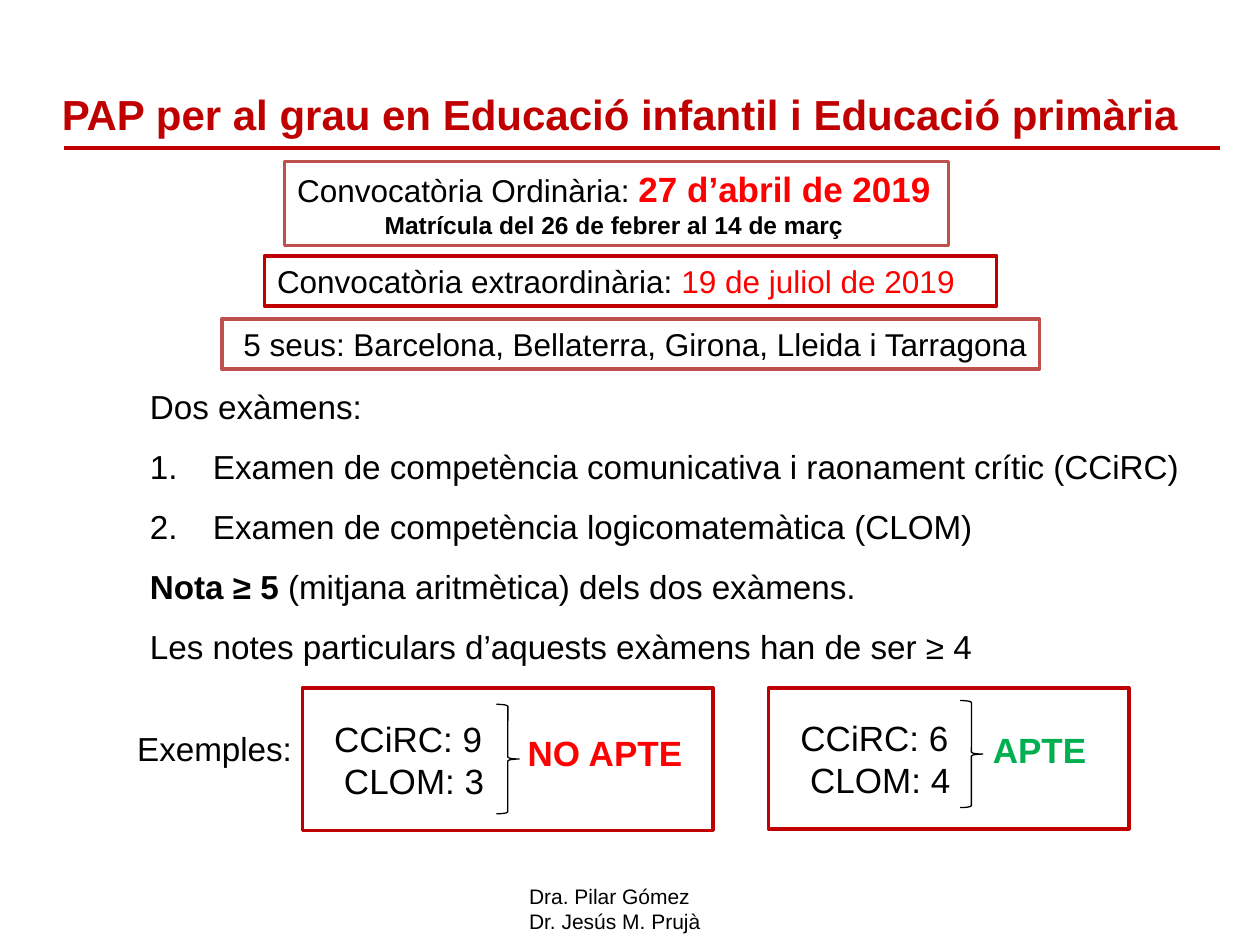
from lxml.etree import SubElement
from pptx import Presentation
from pptx.dml.color import RGBColor
from pptx.enum.shapes import MSO_CONNECTOR, MSO_SHAPE
from pptx.enum.text import MSO_ANCHOR, MSO_AUTO_SIZE, PP_ALIGN
from pptx.oxml.ns import qn
from pptx.util import Pt

THEME = {
    "font": "Arial",
    "black": "000000", "white": "FFFFFF", "dark_red": "C00000",
    "brick": "C0504D", "red": "FF0000", "green": "00B050",
    "title": 24, "body": 19, "box": 18, "date": 20, "enrol": 14,
    "example": 20, "footer": 12, "box_line": 2, "rule_line": 2.25, "brace_line": 0.75,
}
LEFT, CENTER, RIGHT = PP_ALIGN.LEFT, PP_ALIGN.CENTER, PP_ALIGN.RIGHT

# Content: a run is (text, size, colour, bold)
TITLE = "PAP per al grau en Educació infantil i Educació primària"
FOOTER = ["Dra. Pilar Gómez", "Dr. Jesús M. Prujà"]
EXAMS = [  # (numbered, [(text, bold)])
    (False, [("Dos exàmens:", False)]),
    (True, [("Examen de competència comunicativa i raonament crític (CCiRC)", False)]),
    (True, [("Examen de competència logicomatemàtica (CLOM)", False)]),
    (False, [("Nota ≥ 5 ", True), ("(mitjana aritmètica) dels dos exàmens.", False)]),
    (False, [("Les notes particulars d’aquests exàmens han de ser ≥ 4", False)]),
]
CALLS = [  # (position, border, wrap, [(alignment, runs)])
    ((162.7, 92.2, 379.4, 48.2), "brick", False, [
        (LEFT, [("Convocatòria Ordinària: ", "box", "black", False),
                ("27 d’abril de 2019", "date", "red", True)]),
        (CENTER, [("Matrícula del 26 de febrer al 14 de març", "enrol", "black", True)])]),
    ((151.2, 146.2, 418.3, 28.8), "dark_red", False, [
        (LEFT, [("Convocatòria extraordinària: ", "box", "black", False),
                ("19 de juliol de 2019", "box", "red", False)])]),
    ((126.7, 182.2, 467.3, 28.8), "brick", True, [
        (RIGHT, [("5 seus: Barcelona, Bellaterra, Girona, Lleida i Tarragona",
                  "box", "black", False)])]),
]
EXAMPLES = [  # (box, brace, verdict position, marks, verdict, colour)
    ((172.8, 393.1, 234.7, 81.4), (283.7, 402.5, 13, 62.6), (294.5, 414.7, 103.7, 31.7),
     ["CCiRC: 9", "CLOM: 3"], "NO APTE", "red"),
    ((439.2, 393.1, 205.9, 80.6), (548.6, 400.3, 13, 61.2), (560.2, 412.6, 68.4, 31.7),
     ["CCiRC: 6", "CLOM: 4"], "APTE", "green"),
]
MARK_INDENTS = [11.1, 16.7]


def rgb(name):
    return RGBColor.from_string(THEME[name])


def place(shape, position):
    shape.left, shape.top, shape.width, shape.height = map(Pt, position)


def add_run(paragraph, text, size, colour="black", bold=False):
    run = paragraph.add_run()
    run.text = text
    run.font.name = THEME["font"]
    run.font.size = Pt(THEME[size])
    run.font.bold = bold
    run.font.color.rgb = rgb(colour)


def paragraphs(frame, items):
    """Pair each item with its paragraph, adding paragraphs as needed."""
    for index, item in enumerate(items):
        yield (frame.add_paragraph() if index else frame.paragraphs[0]), item


def set_indent(paragraph, left, first=0):
    properties = paragraph._p.get_or_add_pPr()
    properties.set("marL", str(Pt(left)))
    properties.set("indent", str(Pt(first)))
    return properties


def add_outline(slide, kind, position, border, width, fill=None):
    shape = slide.shapes.add_shape(kind, *map(Pt, position))
    shape.shadow.inherit = False
    shape.line.color.rgb = rgb(border)
    shape.line.width = Pt(THEME[width])
    if fill:
        shape.fill.solid()
        shape.fill.fore_color.rgb = rgb(fill)
    else:
        shape.fill.background()
    return shape


def add_label(slide, position, lines, size, colour="black", bold=False):
    frame = slide.shapes.add_textbox(*map(Pt, position)).text_frame
    frame.word_wrap = False
    frame.auto_size = MSO_AUTO_SIZE.SHAPE_TO_FIT_TEXT
    for paragraph, line in paragraphs(frame, lines):
        add_run(paragraph, line, size, colour, bold)


def add_header(slide):
    rule = slide.shapes.add_connector(
        MSO_CONNECTOR.STRAIGHT, Pt(36.7), Pt(84.5), Pt(697), Pt(84.5))
    rule.line.color.rgb = rgb("dark_red")
    rule.line.width = Pt(THEME["rule_line"])
    SubElement(rule._element.spPr, qn("a:effectLst"))

    title = slide.shapes.title
    place(title, (28.1, 45.4, 691.9, 39.6))
    frame = title.text_frame
    frame.auto_size = MSO_AUTO_SIZE.NONE
    frame.vertical_anchor = MSO_ANCHOR.MIDDLE
    frame.paragraphs[0].alignment = LEFT
    add_run(frame.paragraphs[0], TITLE, "title", "dark_red", True)


def add_exams(slide):
    body = slide.placeholders[1]
    place(body, (78.5, 205.9, 680.4, 180))
    body.text_frame.auto_size = MSO_AUTO_SIZE.NONE
    for paragraph, (numbered, runs) in paragraphs(body.text_frame, EXAMS):
        properties = set_indent(paragraph, *((36, -36) if numbered else (0, 0)))
        paragraph.line_spacing = 1.5
        paragraph.space_before = Pt(0)
        if numbered:
            SubElement(properties, qn("a:buFont")).set("typeface", THEME["font"])
            SubElement(properties, qn("a:buAutoNum")).set("type", "arabicPeriod")
        else:
            SubElement(properties, qn("a:buNone"))
        for text, bold in runs:
            add_run(paragraph, text, "body", bold=bold)


def add_calls(slide):
    for position, border, wrap, lines in CALLS:
        box = add_outline(slide, MSO_SHAPE.RECTANGLE, position, border, "box_line", "white")
        frame = box.text_frame
        frame.word_wrap = wrap
        frame.auto_size = MSO_AUTO_SIZE.SHAPE_TO_FIT_TEXT
        frame.vertical_anchor = MSO_ANCHOR.TOP
        for paragraph, (alignment, runs) in paragraphs(frame, lines):
            paragraph.alignment = alignment
            for run in runs:
                add_run(paragraph, *run)


def add_examples(slide):
    add_label(slide, (71.3, 412.6, 104.4, 30.2), ["Exemples:"], "body")
    for box_at, brace_at, verdict_at, marks, verdict, colour in EXAMPLES:
        box = add_outline(slide, MSO_SHAPE.RECTANGLE, box_at, "dark_red", "box_line")
        box.text_frame.vertical_anchor = MSO_ANCHOR.MIDDLE
        lines = zip(marks, MARK_INDENTS)
        for paragraph, (mark, indent) in paragraphs(box.text_frame, lines):
            set_indent(paragraph, indent)
            paragraph.alignment = LEFT
            add_run(paragraph, mark, "example")
        add_outline(slide, MSO_SHAPE.RIGHT_BRACE, brace_at, "black", "brace_line")
        add_label(slide, verdict_at, [verdict], "example", colour, True)


def main():
    deck = Presentation()
    deck.slide_width, deck.slide_height = Pt(720), Pt(540)
    slide = deck.slides.add_slide(deck.slide_layouts[1])
    add_header(slide)
    add_exams(slide)
    add_calls(slide)
    add_examples(slide)
    add_label(slide, (295.2, 501.1, 113.8, 36), FOOTER, "footer")
    deck.save("out.pptx")


if __name__ == "__main__":
    main()
